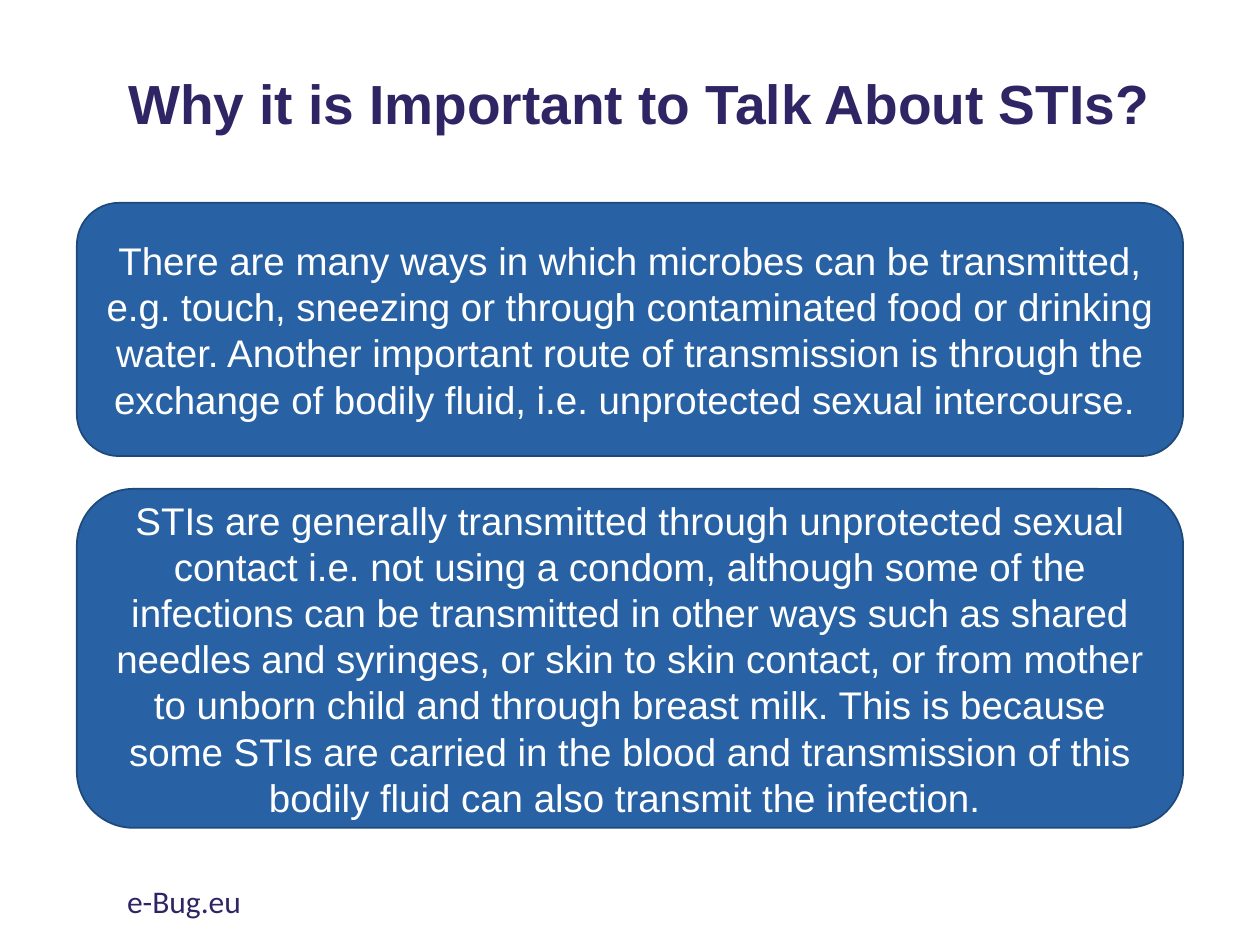
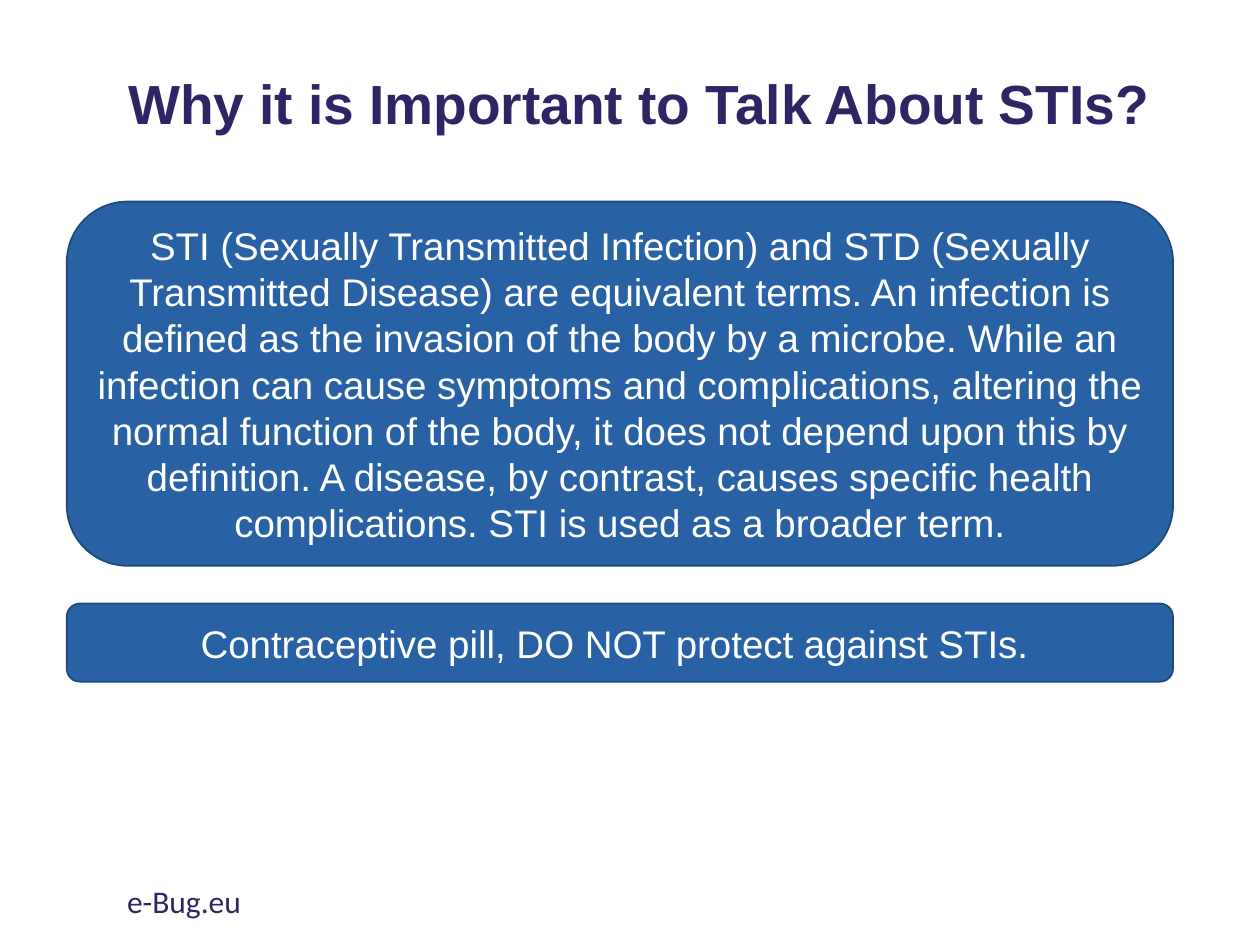
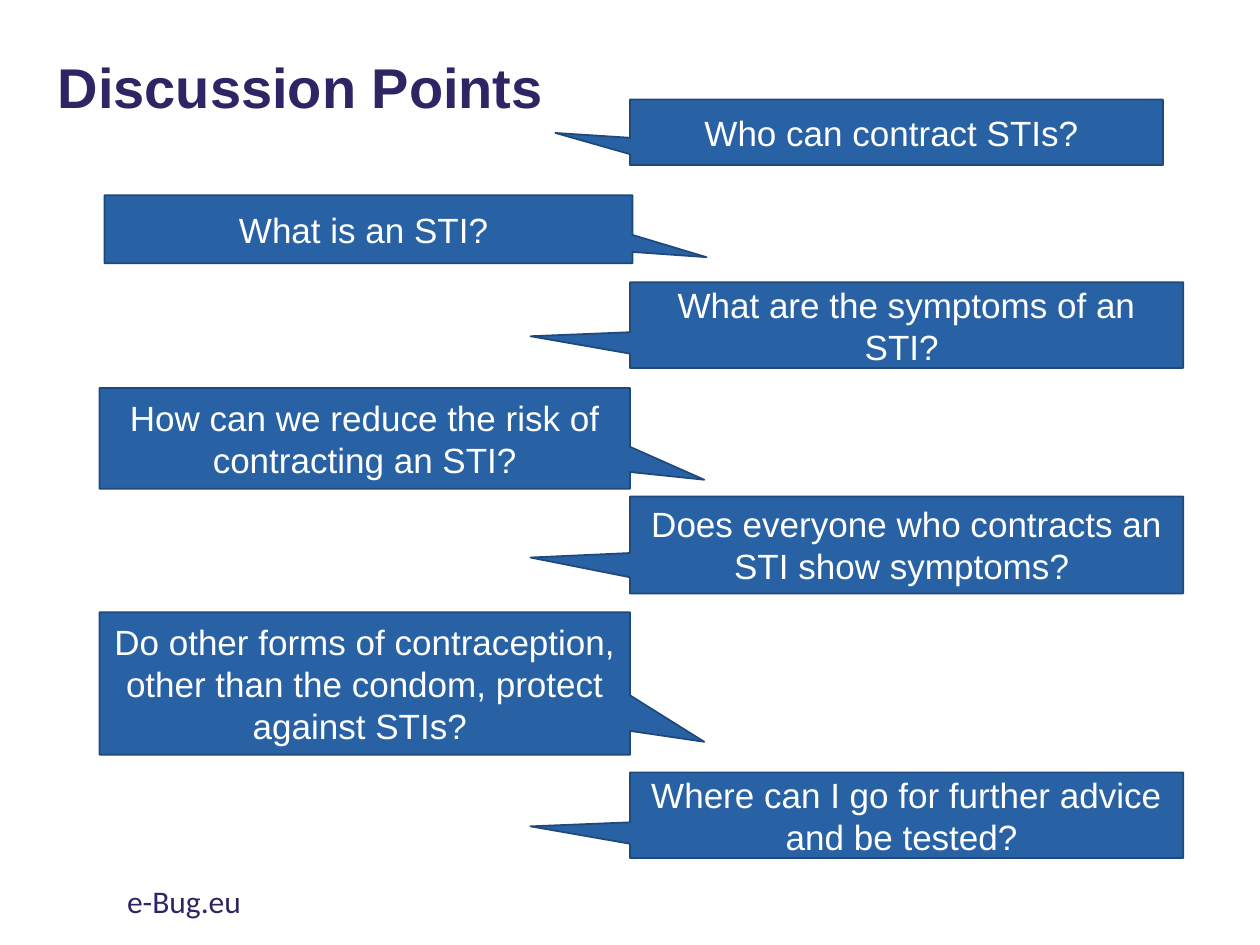
from pptx import Presentation
from pptx.dml.color import RGBColor
from pptx.enum.shapes import MSO_SHAPE as Shape
from pptx.enum.text import MSO_ANCHOR as Anchor, PP_ALIGN as Align
from pptx.util import Inches, Pt

NAVY, BLUE, EDGE, WHITE = "302564", "2862A5", "1E497A", "FFFFFF"
TITLE = {"size": Pt(32), "name": "Arial", "bold": True, "color": NAVY}
LONG_TITLE = {**TITLE, "size": Pt(31.5)}
BODY = {"size": Pt(22), "name": "Arial", "color": WHITE}
QUESTION = {**BODY, "size": Pt(20)}
FOOTER = {"size": Pt(18), "name": "Calibri", "color": NAVY}

IMPORTANCE_TITLE = "Why it is Important to Talk About STIs?"
IMPORTANCE_SLIDES = [
    (0.61, [
        (1.61, 2.01,
         "There are many ways in which microbes can be transmitted, e.g. touch, "
         "sneezing or through contaminated food or drinking water. Another "
         "important route of transmission is through the exchange of bodily "
         "fluid, i.e. unprotected sexual intercourse. "),
        (3.88, 2.69,
         "STIs are generally transmitted through unprotected sexual contact i.e. "
         "not using a condom, although some of the infections can be transmitted "
         "in other ways such as shared needles and syringes, or skin to skin "
         "contact, or from mother to unborn child and through breast milk. This "
         "is because some STIs are carried in the blood and transmission of this "
         "bodily fluid can also transmit the infection. "),
    ]),
    (0.53, [
        (1.6, 2.89,
         "STI (Sexually Transmitted Infection) and STD (Sexually Transmitted "
         "Disease) are equivalent terms. An infection is defined as the invasion "
         "of the body by a microbe. While an infection can cause symptoms and "
         "complications, altering the normal function of the body, it does not "
         "depend upon this by definition. A disease, by contrast, causes specific "
         "health complications. STI is used as a broader term."),
        (4.79, 0.62, "Contraceptive pill, DO NOT protect against STIs. "),
    ]),
]

LEFT_TAIL, RIGHT_TAIL, FIRST_TAIL = (-0.68, 0.13), (0.64, 0.41), (-0.64, 0.01)
QUESTIONS = [
    ((5, 0.79, 4.23, 0.52), FIRST_TAIL, "Who can contract STIs? "),
    ((0.83, 1.55, 4.19, 0.54), RIGHT_TAIL, "What is an STI? "),
    ((5, 2.24, 4.39, 0.68), LEFT_TAIL, "What are the symptoms of an STI? "),
    ((0.79, 3.08, 4.21, 0.8), RIGHT_TAIL,
     "How can we reduce the risk of contracting an STI?"),
    ((5, 3.94, 4.39, 0.77), LEFT_TAIL,
     "Does everyone who contracts an STI show symptoms? "),
    ((0.79, 4.86, 4.21, 1.13), RIGHT_TAIL,
     "Do other forms of contraception, other than the condom, protect against STIs? "),
    ((5, 6.13, 4.39, 0.68), LEFT_TAIL,
     "Where can I go for further advice and be tested? "),
]


def rgb(value):
    """Turn a hex string into a colour."""
    return RGBColor.from_string(value)


def write(shape, text, style, align, anchor=Anchor.MIDDLE, spacing=None):
    """Put one formatted paragraph into a shape."""
    frame = shape.text_frame
    frame.word_wrap = True
    frame.vertical_anchor = anchor
    paragraph = frame.paragraphs[0]
    paragraph.alignment = align
    paragraph.line_spacing = spacing
    run = paragraph.add_run()
    run.text = text
    for name, value in style.items():
        if name == "color":
            run.font.color.rgb = rgb(value)
        else:
            setattr(run.font, name, value)


def add_label(slide, box, text, style, align=Align.LEFT, **layout):
    """Add a text box at the given left, top, width and height."""
    shape = slide.shapes.add_textbox(*map(Inches, box))
    write(shape, text, style, align, **layout)


def add_panel(slide, kind, box, text, style):
    """Add a blue outlined shape with centred text."""
    shape = slide.shapes.add_shape(kind, *map(Inches, box))
    shape.shadow.inherit = False
    shape.fill.solid()
    shape.fill.fore_color.rgb = rgb(BLUE)
    shape.line.color.rgb = rgb(EDGE)
    shape.line.width = Pt(1)
    write(shape, text, style, Align.CENTER)
    return shape


def add_callout(slide, box, tail, text):
    """Add a question callout whose tail ends at the given offsets."""
    callout = add_panel(slide, Shape.RECTANGULAR_CALLOUT, box, text, QUESTION)
    for index, offset in enumerate(tail):
        callout.adjustments[index] = offset


def add_slide(presentation, title, box, style, align):
    """Add a blank slide with its title and footer."""
    slide = presentation.slides.add_slide(presentation.slide_layouts[6])
    add_label(slide, box, title, style, align, spacing=0.9)
    add_label(slide, (0.91, 6.95, 3.38, 0.4), "e-Bug.eu", FOOTER, anchor=Anchor.TOP)
    return slide


def main():
    """Build and save the presentation."""
    presentation = Presentation()
    presentation.slide_width, presentation.slide_height = Inches(10), Inches(7.5)
    for left, panels in IMPORTANCE_SLIDES:
        slide = add_slide(presentation, IMPORTANCE_TITLE, (0.76, 0.39, 8.62, 0.91),
                          LONG_TITLE, Align.CENTER)
        for top, height, text in panels:
            add_panel(slide, Shape.ROUNDED_RECTANGLE, (left, top, 8.78, height),
                      text, BODY)
    slide = add_slide(presentation, "Discussion Points", (0.36, -0.01, 4.74, 1.45),
                      TITLE, Align.LEFT)
    for box, tail, text in QUESTIONS:
        add_callout(slide, box, tail, text)
    presentation.save("out.pptx")


if __name__ == "__main__":
    main()
